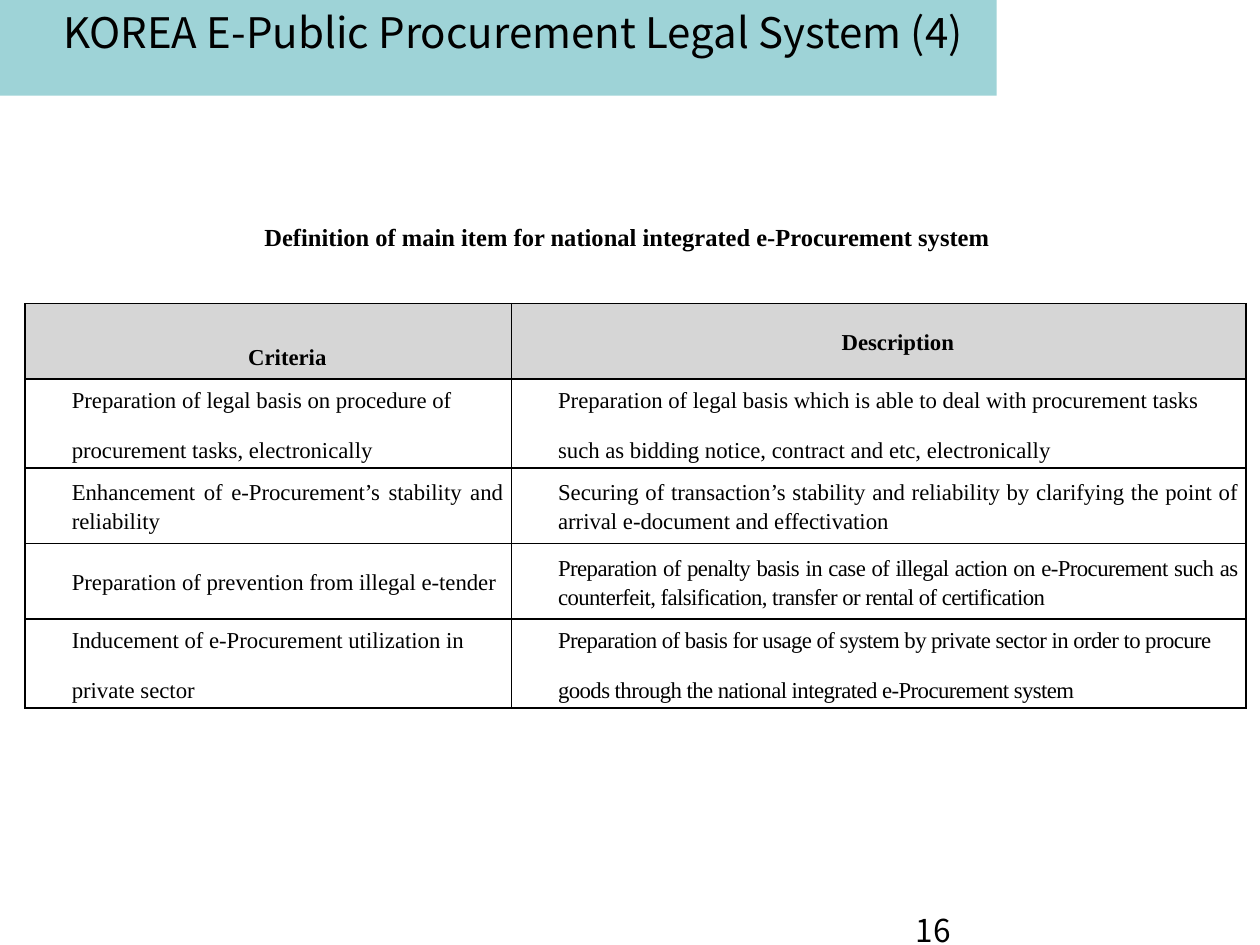
from pptx import Presentation
from pptx.dml.color import RGBColor
from pptx.enum.shapes import MSO_SHAPE
from pptx.enum.text import MSO_ANCHOR, PP_ALIGN
from pptx.oxml import parse_xml
from pptx.oxml.ns import nsdecls
from pptx.util import Inches, Pt

TITLE = "KOREA E-Public Procurement Legal System (4)"
SUBTITLE = "Definition of main item for national integrated e-Procurement system"
PAGE_NUMBER = "16"
HEADERS = ("Criteria", "Description")
ITEMS = [
    (["Preparation of legal basis on procedure of", "procurement tasks, electronically"],
     ["Preparation of legal basis which is able to deal with procurement tasks",
      "such as bidding notice, contract and etc, electronically"]),
    (["Enhancement of e-Procurement’s stability and reliability"],
     ["Securing of transaction’s stability and reliability by clarifying the point of "
      "arrival e-document and effectivation"]),
    (["Preparation of prevention from illegal e-tender"],
     ["Preparation of penalty basis in case of illegal action on e-Procurement such as "
      "counterfeit, falsification, transfer or rental of certification"]),
    (["Inducement of e-Procurement utilization in", "private sector"],
     ["Preparation of basis for usage of system by private sector in order to procure",
      "goods through the national integrated e-Procurement system"]),
]
TIGHT_CELLS = {(3, 1), (4, 1)}
COLUMN_WIDTHS = (3.86, 5.83)
ROW_HEIGHTS = (0.6, 0.67, 0.6, 0.6, 0.6)
SANS, SERIF = "Noto Sans CJK KR", "Times New Roman"
BLACK, GREY, TEAL = "000000", "D6D6D6", "9ED3D7"


def color(value):
    return RGBColor.from_string(value)


def style_font(paragraph, name, size, bold=False):
    font = paragraph.font
    font.name, font.size, font.bold = name, Pt(size), bold
    font.color.rgb = color(BLACK)
    for run in paragraph.runs:
        run_properties = run._r.get_or_add_rPr()
        run_properties.append(parse_xml(f'<a:ea {nsdecls("a")} typeface="{name}"/>'))


def set_indent(paragraph, inches):
    properties = paragraph._p.get_or_add_pPr()
    properties.set("marL", str(Inches(inches)))
    properties.set("indent", "0")


def add_text(slide, text, box, name, size, bold=False, align=PP_ALIGN.LEFT,
             anchor=MSO_ANCHOR.TOP, indent=0):
    frame = slide.shapes.add_textbox(*map(Inches, box)).text_frame
    frame.word_wrap = True
    frame.vertical_anchor = anchor
    paragraph = frame.paragraphs[0]
    paragraph.text = text
    paragraph.alignment = align
    set_indent(paragraph, indent)
    style_font(paragraph, name, size, bold)


def add_borders(cell):
    properties = cell._tc.get_or_add_tcPr()
    for position, side in enumerate(("lnL", "lnR", "lnT", "lnB")):
        properties.insert(position, parse_xml(
            f'<a:{side} {nsdecls("a")} w="{Pt(1)}"><a:solidFill>'
            f'<a:srgbClr val="{BLACK}"/></a:solidFill></a:{side}>'))


def fill_cell(cell, lines, header, tight):
    cell.vertical_anchor = MSO_ANCHOR.MIDDLE
    cell.margin_left = cell.margin_right = Inches(0.07)
    cell.margin_top = cell.margin_bottom = Inches(0.02)
    if header:
        cell.fill.solid()
        cell.fill.fore_color.rgb = color(GREY)
    else:
        cell.fill.background()
    add_borders(cell)
    cell.text_frame.text = "\n".join(lines)
    for index, paragraph in enumerate(cell.text_frame.paragraphs):
        paragraph.alignment = PP_ALIGN.CENTER if header else PP_ALIGN.JUSTIFY
        paragraph.line_spacing = 1.15
        paragraph.space_before = Pt(12 if index else 0)
        set_indent(paragraph, 0.3)
        style_font(paragraph, SERIF, 13, header)
        if tight:
            paragraph.runs[0]._r.get_or_add_rPr().set("spc", "-30")


def add_criteria_table(slide):
    rows = [tuple([header] for header in HEADERS), *ITEMS]
    table = slide.shapes.add_table(
        len(rows), len(HEADERS), Inches(0.2), Inches(2.41),
        Inches(sum(COLUMN_WIDTHS)), Inches(sum(ROW_HEIGHTS))).table
    table.horz_banding = False
    for column, width in zip(table.columns, COLUMN_WIDTHS):
        column.width = Inches(width)
    for row, height in zip(table.rows, ROW_HEIGHTS):
        row.height = Inches(height)
    for r, row in enumerate(rows):
        for c, lines in enumerate(row):
            fill_cell(table.cell(r, c), lines, r == 0, (r, c) in TIGHT_CELLS)
    table.cell(0, 0).margin_top = Inches(0.25)


def main():
    presentation = Presentation()
    presentation.slide_width, presentation.slide_height = Inches(10), Inches(7.5)
    slide = presentation.slides.add_slide(presentation.slide_layouts[6])

    band = slide.shapes.add_shape(MSO_SHAPE.RECTANGLE, 0, 0, Inches(7.91), Inches(0.76))
    band.shadow.inherit = False
    band.fill.solid()
    band.fill.fore_color.rgb = color(TEAL)
    band.line.fill.background()

    add_text(slide, PAGE_NUMBER, (7.17, 7.18, 2.33, 0.32), SANS, 18)
    add_criteria_table(slide)
    add_text(slide, SUBTITLE, (0, 1.71, 8.62, 0.34), SERIF, 14, bold=True,
             anchor=MSO_ANCHOR.MIDDLE, indent=2)
    add_text(slide, TITLE, (-0.43, 0, 9, 0.6), SANS, 24, align=PP_ALIGN.CENTER)
    presentation.save("out.pptx")


if __name__ == "__main__":
    main()
